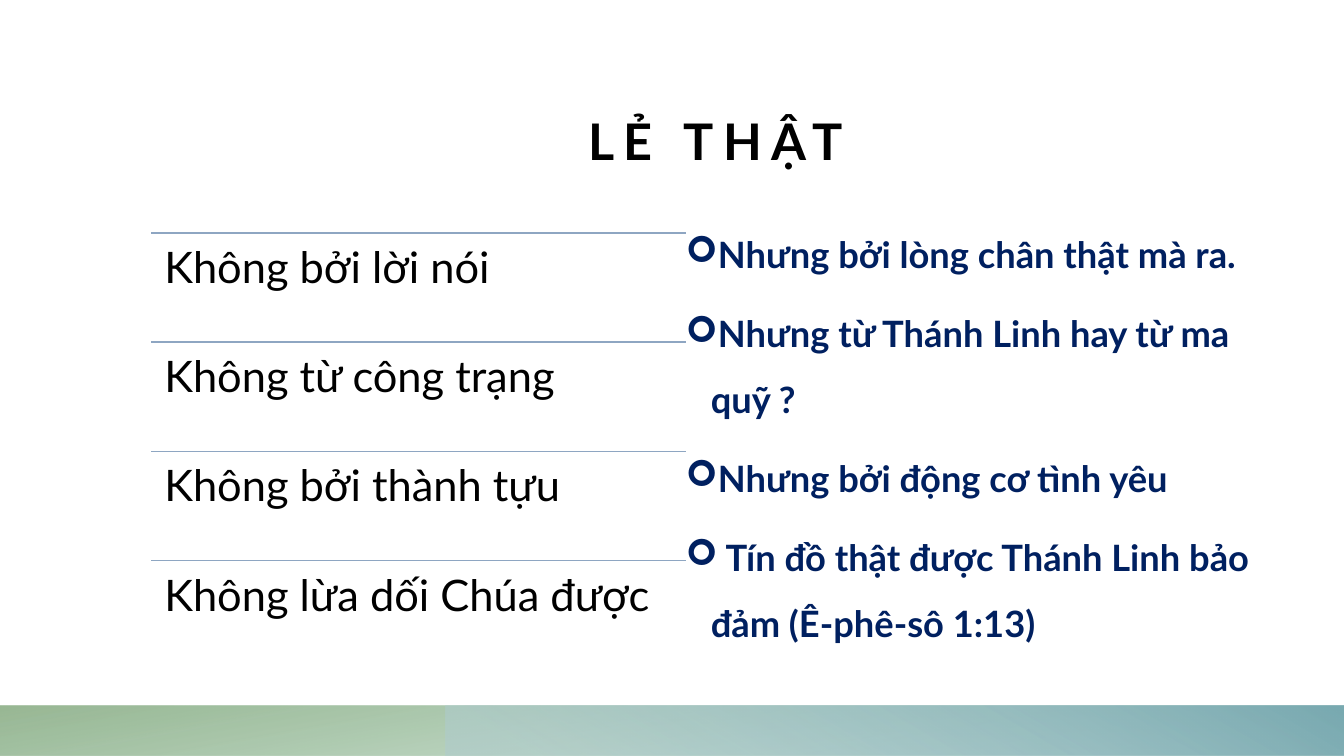
"""Builds the "LẺ THẬT" slide: ruled statements on the left, bulleted answers on the right."""
from lxml import etree
from pptx import Presentation
from pptx.dml.color import RGBColor
from pptx.enum import shapes, text
from pptx.oxml import ns
from pptx.util import Inches, Pt

COLORS = {
    "black": "000000", "navy": "002060", "rule": "8EA6C2",
    "mint": "77AF88", "leaf": "86AB81", "mist": "AFCCD0", "teal": "79AAB1",
}
STATEMENTS = ["Không bởi lời nói", "Không từ công trạng", "Không bởi thành tựu", "Không lừa dối Chúa được"]
ANSWERS = [
    "Nhưng bởi lòng chân thật mà ra.",
    "Nhưng từ Thánh Linh hay từ ma quỹ ?",
    "Nhưng bởi động cơ tình yêu",
    " Tín đồ thật được Thánh Linh bảo đảm (Ê-phê-sô 1:13)",
]
BANDS = [
    (0, 13.33, 100, [(0.14, "mint", 28), (1, "leaf", 85)]),
    (4.42, 8.92, 60, [(0.09, "mist", 55), (0.99, "teal", 100)]),
]


def set_frame(frame, margin, anchor):
    frame.word_wrap = True
    frame.auto_size = text.MSO_AUTO_SIZE.NONE
    frame.vertical_anchor = anchor
    frame.margin_left = frame.margin_right = Inches(margin)
    frame.margin_top = frame.margin_bottom = Inches(margin)


def style_runs(paragraph, size, color, bold=False):
    for run in paragraph.runs:
        run.font.name = "Lato"
        run.font.size = Pt(size)
        run.font.bold = bold
        run.font.color.rgb = RGBColor.from_string(COLORS[color])


presentation = Presentation()
presentation.slide_width = Inches(13.33)
presentation.slide_height = Inches(7.5)
slide = presentation.slides.add_slide(presentation.slide_layouts[5])

for left, width, angle, stops in BANDS:
    band = slide.shapes.add_shape(
        shapes.MSO_SHAPE.RECTANGLE, Inches(left), Inches(7), Inches(width), Inches(0.5))
    band.shadow.inherit = False
    band.line.fill.background()
    band.fill.gradient()
    band.fill.gradient_angle = angle
    for stop, (position, color, opacity) in zip(band.fill.gradient_stops, stops):
        stop.position = position
        stop.color.rgb = RGBColor.from_string(COLORS[color])
    for element, (position, color, opacity) in zip(band._element.spPr.iter(ns.qn("a:srgbClr")), stops):
        etree.SubElement(element, ns.qn("a:alpha"), val=str(opacity * 1000))

title = slide.shapes.title
title.left, title.top, title.width, title.height = Inches(1.5), Inches(0.87), Inches(11.2), Inches(0.82)
set_frame(title.text_frame, 0, text.MSO_ANCHOR.BOTTOM)
title.text_frame.text = "LẺ THẬT"
heading = title.text_frame.paragraphs[0]
heading.alignment = text.PP_ALIGN.CENTER
style_runs(heading, 36, "black", bold=True)
heading.runs[0].font._element.set("spc", "700")

for row, statement in enumerate(STATEMENTS):
    top = Inches(2.31 + row * 3.25 / 3)
    rule = slide.shapes.add_connector(
        shapes.MSO_CONNECTOR.STRAIGHT, Inches(1.5), top, Inches(6.8), top)
    rule.line.color.rgb = RGBColor.from_string(COLORS["rule"])
    rule.line.width = Pt(1)
    etree.SubElement(rule._element.spPr, ns.qn("a:effectLst"))
    box = slide.shapes.add_textbox(Inches(1.5), top, Inches(5.3), Inches(1.08))
    set_frame(box.text_frame, 0.13, text.MSO_ANCHOR.TOP)
    box.text_frame.text = statement
    paragraph = box.text_frame.paragraphs[0]
    paragraph.line_spacing = 0.9
    style_runs(paragraph, 31, "black")

answers = slide.shapes.add_textbox(Inches(6.8), Inches(2.09), Inches(5.9), Inches(4.33))
set_frame(answers.text_frame, 0, text.MSO_ANCHOR.TOP)
answers.text_frame.text = "\n".join(ANSWERS)
for paragraph in answers.text_frame.paragraphs:
    paragraph.line_spacing = 1.5
    paragraph.space_before = Pt(10)
    style_runs(paragraph, 25.9, "navy", bold=True)
    properties = paragraph._p.get_or_add_pPr()
    properties.set("marL", str(Inches(0.25)))
    properties.set("indent", str(Inches(-0.25)))
    etree.SubElement(properties, ns.qn("a:buFont"), typeface="Wingdings")
    etree.SubElement(properties, ns.qn("a:buChar"), char="➢")

presentation.save("out.pptx")
